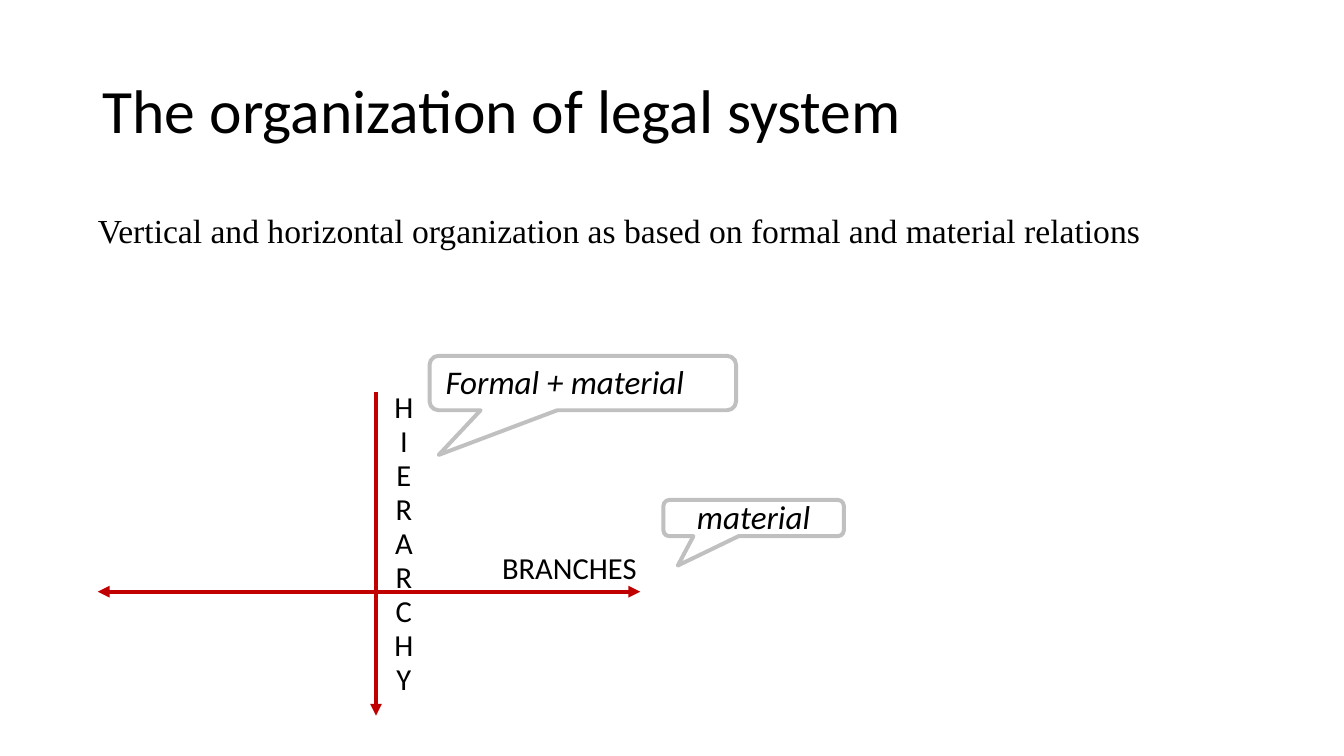
"""Build a slide showing the vertical and horizontal axes of a legal system."""
from dataclasses import dataclass

from lxml import etree
from pptx import Presentation
from pptx import util as u
from pptx.dml.color import RGBColor
from pptx.enum import shapes, text
from pptx.oxml import ns


@dataclass(frozen=True)
class Theme:
    ink: str = "000000"
    axis: str = "C00000"
    outline: str = "C0C0C0"
    sans: str = "Calibri"
    serif: str = "Times New Roman"
    title: float = 44
    lead: float = 24
    label: float = 21.8
    note: float = 23.6
    stroke: float = 2.83


THEME = Theme()
WIDTH, HEIGHT = u.Inches(13.33), u.Inches(7.5)
PADDING = (0.11, 0.06)
LEFT, CENTER = text.PP_ALIGN.LEFT, text.PP_ALIGN.CENTER
TOP, MIDDLE = text.MSO_ANCHOR.TOP, text.MSO_ANCHOR.MIDDLE

TITLE = "The organization of legal system"
LEAD = "Vertical and horizontal organization as based on formal and material relations"
VERTICAL, HORIZONTAL = "HIERARCHY", "BRANCHES"
VERTICAL_NOTE, HORIZONTAL_NOTE = "Formal + material", "material"

# Places are percentages of the slide: left, top, width, height.
TITLE_AREA = (6.9, 5.33, 86.27, 19.33)
LEAD_AREA = (7.28, 18.93, 85.9, 23.47)
VERTICAL_AREA = (28.06, 50.93, 3.98, 42.13)
HORIZONTAL_AREA = (36.53, 72.27, 14.18, 6.13)
VERTICAL_CALLOUT = (31.96, 47.07, 22.81, 7.2)
VERTICAL_NOTE_AREA = (32.33, 47.47, 20.78, 6.53)
HORIZONTAL_CALLOUT = (49.36, 66.13, 13.43, 4.8)
AXES = [
    ((27.98, 51.87, 27.98, 94.67), ("tailEnd",)),
    ((7.28, 78.27, 47.64, 78.27), ("headEnd", "tailEnd")),
]


def place(area):
    return [round(side * share / 100) for side, share in zip((WIDTH, HEIGHT) * 2, area)]


def write(box, lines, size, font=THEME.sans, align=LEFT, anchor=TOP,
          padding=PADDING, spacing=0.93, italic=False):
    frame = box.text_frame
    frame.word_wrap = True
    frame.vertical_anchor = anchor
    frame.margin_left = frame.margin_right = u.Inches(padding[0])
    frame.margin_top = frame.margin_bottom = u.Inches(padding[1])
    for index, line in enumerate(lines):
        para = frame.add_paragraph() if index else frame.paragraphs[0]
        para.alignment = align
        para.line_spacing = spacing
        span = para.add_run()
        span.text = line
        span.font.name = font
        span.font.size = u.Pt(size)
        span.font.italic = italic
        span.font.color.rgb = RGBColor.from_string(THEME.ink)


def add_text(page, area, lines, size, **style):
    write(page.shapes.add_textbox(*place(area)), lines, size, **style)


def stroke(line, color):
    line.color.rgb = RGBColor.from_string(color)
    line.width = u.Pt(THEME.stroke)


def add_axis(page, ends, arrows):
    axis = page.shapes.add_connector(shapes.MSO_CONNECTOR.STRAIGHT, *place(ends))
    stroke(axis.line, THEME.axis)
    outline = axis.line._get_or_add_ln()
    for arrow in arrows:
        etree.SubElement(outline, ns.qn(f"a:{arrow}"), type="triangle")
    etree.SubElement(axis._element.spPr, ns.qn("a:effectLst"))


def add_callout(page, area, tip):
    callout = page.shapes.add_shape(
        shapes.MSO_SHAPE.ROUNDED_RECTANGULAR_CALLOUT, *place(area))
    callout.shadow.inherit = False
    callout.fill.background()
    stroke(callout.line, THEME.outline)
    callout.adjustments[0], callout.adjustments[1] = tip
    return callout


def main():
    deck = Presentation()
    deck.slide_width, deck.slide_height = WIDTH, HEIGHT
    page = deck.slides.add_slide(deck.slide_layouts[6])
    add_text(page, LEAD_AREA, [LEAD], THEME.lead, font=THEME.serif,
             anchor=MIDDLE, padding=(0, 0), spacing=0.95)
    for ends, arrows in AXES:
        add_axis(page, ends, arrows)
    add_text(page, VERTICAL_AREA, VERTICAL, THEME.label, align=CENTER)
    add_text(page, HORIZONTAL_AREA, [HORIZONTAL], THEME.label)
    add_callout(page, VERTICAL_CALLOUT, (-0.47, 1.32))
    add_text(page, VERTICAL_NOTE_AREA, [VERTICAL_NOTE], THEME.note, italic=True)
    callout = add_callout(page, HORIZONTAL_CALLOUT, (-0.42, 1.31))
    write(callout, [HORIZONTAL_NOTE], THEME.note, align=CENTER, anchor=MIDDLE, italic=True)
    add_text(page, TITLE_AREA, [TITLE], THEME.title, anchor=MIDDLE,
             padding=(0.1, 0.05), spacing=0.9)
    deck.save("out.pptx")


if __name__ == "__main__":
    main()
